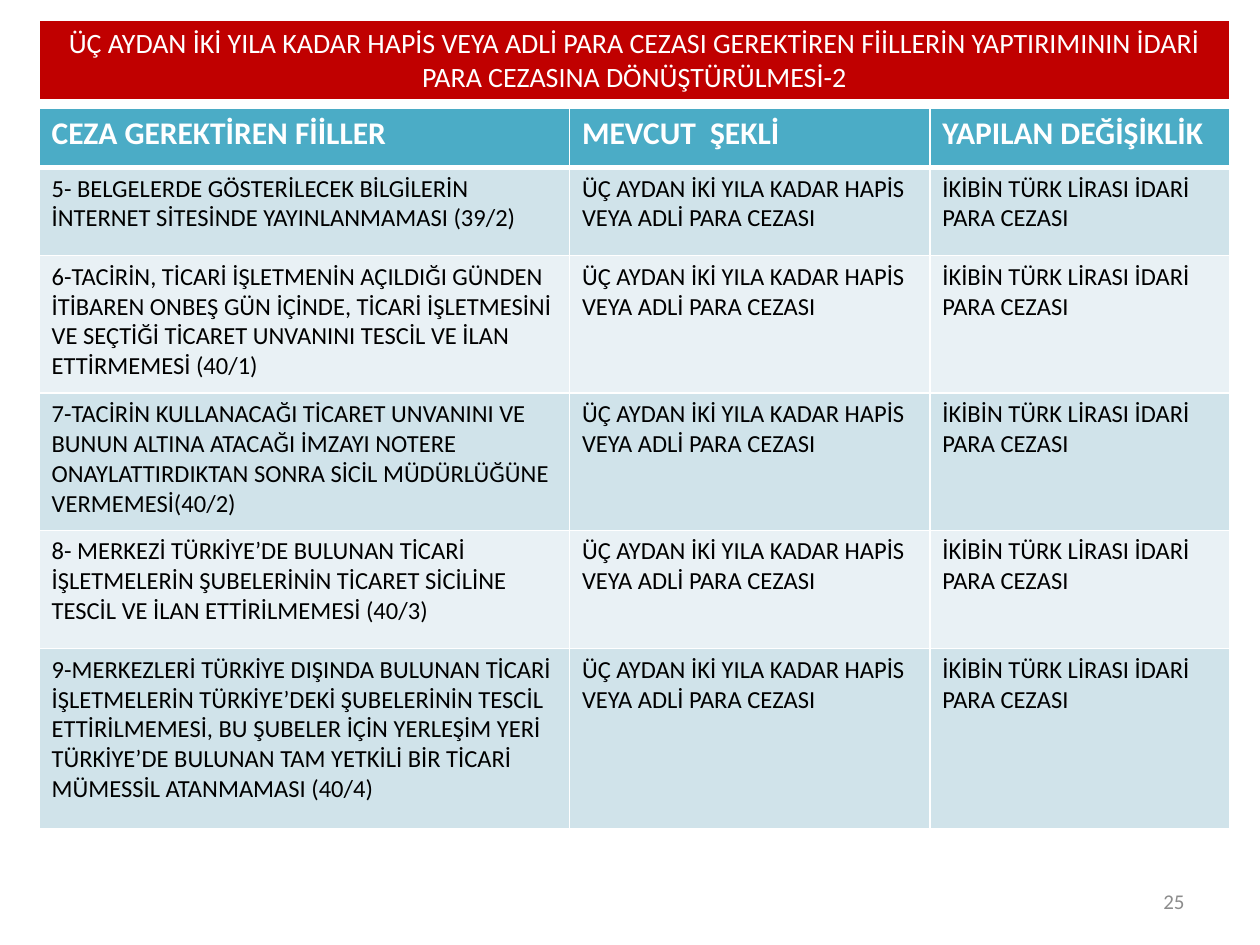
"""Build a slide with a red heading band and a table of offences and penalties."""
from lxml import etree
from pptx import Presentation, util as u
from pptx.dml.color import RGBColor
from pptx.enum import text
from pptx.oxml import ns

WHITE = RGBColor(0xFF, 0xFF, 0xFF)
BLACK = RGBColor(0x00, 0x00, 0x00)
GREY = RGBColor(0x8C, 0x8C, 0x8C)
RED = RGBColor(0xC0, 0x00, 0x00)
TEAL = RGBColor(0x4B, 0xAC, 0xC6)
BANDS = [RGBColor(0xD0, 0xE3, 0xEA), RGBColor(0xE9, 0xF1, 0xF5)]

HEADING = ("ÜÇ AYDAN İKİ YILA KADAR HAPİS VEYA ADLİ PARA CEZASI GEREKTİREN FİİLLERİN "
           "YAPTIRIMININ İDARİ PARA CEZASINA DÖNÜŞTÜRÜLMESİ-2")
COLUMN_NAMES = ["CEZA GEREKTİREN FİİLLER", "MEVCUT  ŞEKLİ", "YAPILAN DEĞİŞİKLİK"]
CURRENT = "ÜÇ AYDAN İKİ YILA KADAR HAPİS VEYA ADLİ PARA CEZASI"
CHANGED = "İKİBİN TÜRK LİRASI İDARİ PARA CEZASI"
OFFENCES = [
    "5- BELGELERDE GÖSTERİLECEK BİLGİLERİN İNTERNET SİTESİNDE YAYINLANMAMASI (39/2)",
    "6-TACİRİN, TİCARİ İŞLETMENİN AÇILDIĞI GÜNDEN İTİBAREN ONBEŞ GÜN İÇİNDE, TİCARİ "
    "İŞLETMESİNİ VE SEÇTİĞİ TİCARET UNVANINI TESCİL VE İLAN ETTİRMEMESİ (40/1)",
    "7-TACİRİN KULLANACAĞI TİCARET UNVANINI VE BUNUN ALTINA ATACAĞI İMZAYI NOTERE "
    "ONAYLATTIRDIKTAN SONRA SİCİL MÜDÜRLÜĞÜNE VERMEMESİ(40/2)",
    "8- MERKEZİ TÜRKİYE’DE BULUNAN TİCARİ İŞLETMELERİN ŞUBELERİNİN TİCARET SİCİLİNE "
    "TESCİL VE İLAN ETTİRİLMEMESİ (40/3)",
    "9-MERKEZLERİ TÜRKİYE DIŞINDA BULUNAN TİCARİ İŞLETMELERİN TÜRKİYE’DEKİ ŞUBELERİNİN "
    "TESCİL ETTİRİLMEMESİ, BU ŞUBELER İÇİN YERLEŞİM YERİ TÜRKİYE’DE BULUNAN TAM YETKİLİ "
    "BİR TİCARİ MÜMESSİL ATANMAMASI (40/4)",
]
LEFT = 0.31
COLUMNS = [4.21, 2.86, 2.38]
ROWS = [0.47, 0.7, 1.09, 1.09, 0.94, 1.43]


def write(para, words, size, color, bold=False):
    span = para.add_run()
    span.text = words
    span.font.name = "Calibri"
    span.font.size = u.Pt(size)
    span.font.bold = bold
    span.font.color.rgb = color


def add_grid(page, top, columns, rows):
    grid = page.shapes.add_table(len(rows), len(columns), u.Inches(LEFT), u.Inches(top),
                                 u.Inches(sum(columns)), u.Inches(sum(rows))).table
    for column, width in zip(grid.columns, columns):
        column.width = u.Inches(width)
    for number, (row, height) in enumerate(zip(grid.rows, rows)):
        row.height = u.Inches(height)
        widths = {"L": 1, "R": 1, "T": 3 if number == 1 else 1, "B": 3 if number == 0 else 1}
        for cell in row.cells:
            properties = cell._tc.get_or_add_tcPr()
            for side, points in widths.items():
                line = etree.SubElement(properties, ns.qn(f"a:ln{side}"), w=str(u.Pt(points)))
                paint = etree.SubElement(line, ns.qn("a:solidFill"))
                etree.SubElement(paint, ns.qn("a:srgbClr"), val=str(WHITE))
            cell.fill.solid()
    return grid


deck = Presentation()
deck.slide_width, deck.slide_height = u.Inches(10), u.Inches(7.5)
page = deck.slides.add_slide(deck.slide_layouts[6])

penalties = add_grid(page, 0.86, COLUMNS, ROWS)
records = [COLUMN_NAMES] + [[offence, CURRENT, CHANGED] for offence in OFFENCES]
for number, record in enumerate(records):
    for cell, words in zip(penalties.rows[number].cells, record):
        para = cell.text_frame.paragraphs[0]
        if number == 0:
            cell.fill.fore_color.rgb = TEAL
            write(para, words, 18, WHITE, bold=True)
        else:
            cell.fill.fore_color.rgb = BANDS[(number - 1) % 2]
            write(para, words, 14, BLACK)

heading = add_grid(page, 0.16, [sum(COLUMNS)], [0.63]).cell(0, 0)
heading.fill.fore_color.rgb = RED
para = heading.text_frame.paragraphs[0]
para.alignment = text.PP_ALIGN.CENTER
write(para, HEADING, 16, WHITE)

box = page.shapes.add_textbox(u.Inches(7.17), u.Inches(6.95), u.Inches(2.33), u.Inches(0.4))
box.text_frame.word_wrap = True
box.text_frame.vertical_anchor = text.MSO_ANCHOR.MIDDLE
para = box.text_frame.paragraphs[0]
para.alignment = text.PP_ALIGN.RIGHT
write(para, "25", 12, GREY)

deck.save("out.pptx")
